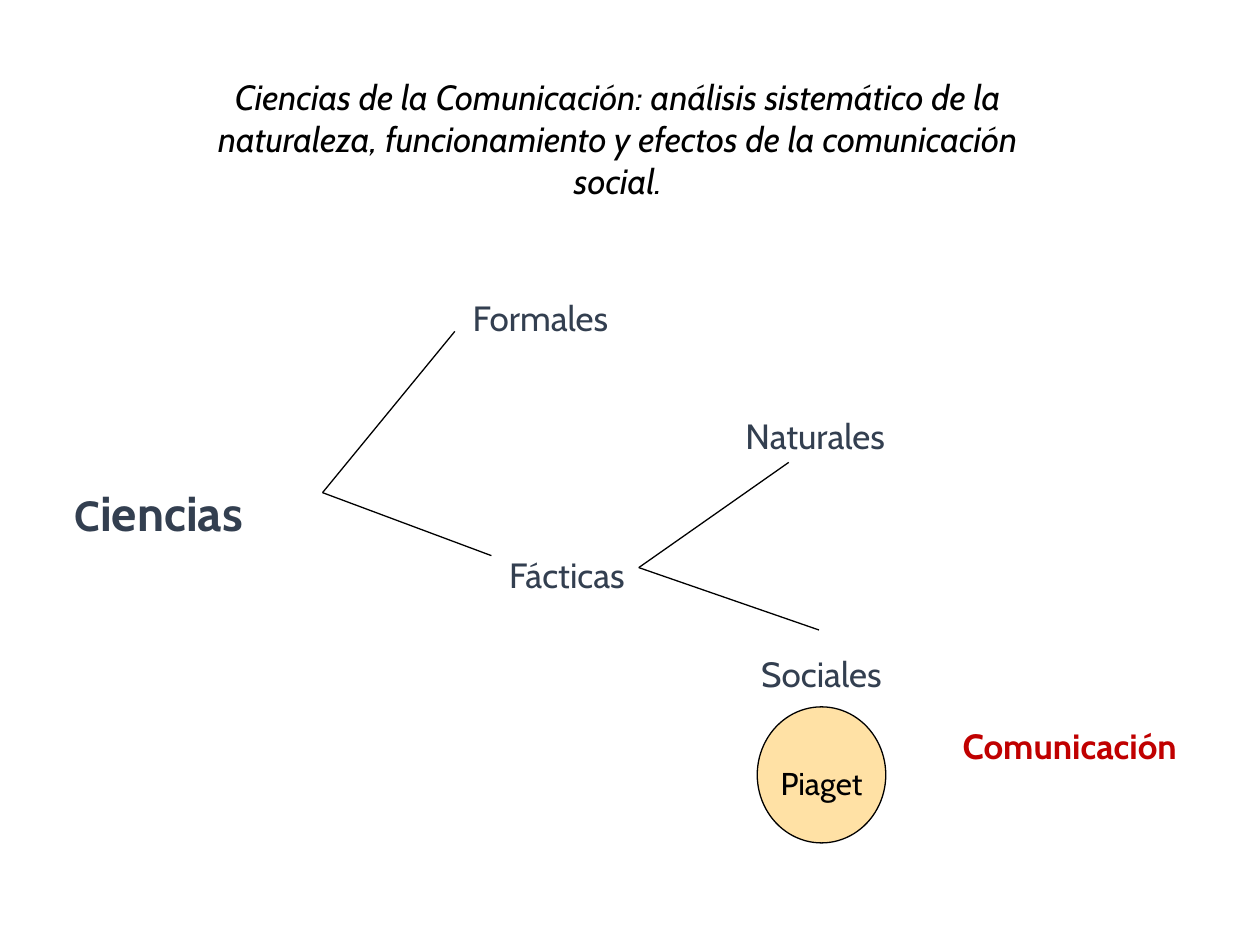
from pptx import Presentation
from pptx.dml.color import RGBColor
from pptx.enum import shapes, text
from pptx.oxml.ns import qn
from pptx.util import Pt
from lxml import etree

FONT = "Cabin"
SLATE, BLACK, RED, AMBER = "333F50", "000000", "C00000", "FFCC66"

TITLE = ("Ciencias de la Comunicación: análisis sistemático de la naturaleza, "
         "funcionamiento y efectos de la comunicación social.")
TITLE_BOX = (102.24, 39.6, 501.84, 79.92)

# Pieces of (text, size), left, top, colour, bold
LABELS = [
    ([("C", 24), ("iencias", 28)], -51.12, 267.12, SLATE, True),
    ([("Formales", 20)], 167.04, 162, SLATE, False),
    ([("Fácticas", 20)], 182.16, 308.88, SLATE, False),
    ([("Sociales", 20)], 327.6, 365.76, SLATE, False),
    ([("Naturales", 20)], 324, 229.68, SLATE, False),
    ([("Comunicación", 20)], 469.44, 406.8, RED, True),
]
LABEL_WIDTH = 283.68

# Fork point and the ends of its branches
FORKS = [
    ((184.32, 281.52), [(259.92, 189.36), (280.8, 317.52)]),
    ((365.04, 324.36), [(468, 360), (450.72, 264.24)]),
]

CIRCLE = (432.72, 403.92, 73.44, 77.76)
CIRCLE_LABEL = (393.12, 406.8, 152.64, 54.72)


def color(value):
    return RGBColor.from_string(value)


def points(values):
    return [Pt(value) for value in values]


def style(span, size, hue, bold=False, italic=False):
    font = span.font
    font.name, font.size, font.bold, font.italic = FONT, Pt(size), bold, italic
    font.color.rgb = color(hue)


def add_label(page, pieces, area, hue, bold=False, anchor=text.MSO_ANCHOR.TOP):
    frame = page.shapes.add_textbox(*points(area)).text_frame
    frame.word_wrap = True
    frame.vertical_anchor = anchor
    para = frame.paragraphs[0]
    para.alignment = text.PP_ALIGN.CENTER
    para.line_spacing = 1.15
    for words, size in pieces:
        span = para.add_run()
        span.text = words
        style(span, size, hue, bold)


def add_branch(page, start, end):
    line = page.shapes.add_connector(
        shapes.MSO_CONNECTOR.STRAIGHT, *points(start + end))
    line.line.color.rgb = color(BLACK)
    line.line.width = Pt(0.75)
    etree.SubElement(line._element.spPr, qn("a:effectLst"))


def add_title(page):
    title = page.shapes.title
    title.left, title.top, title.width, title.height = points(TITLE_BOX)
    frame = title.text_frame
    frame.text = TITLE
    frame.word_wrap = True
    frame.auto_size = text.MSO_AUTO_SIZE.NONE
    frame.vertical_anchor = text.MSO_ANCHOR.TOP
    para = frame.paragraphs[0]
    para.alignment = text.PP_ALIGN.CENTER
    style(para.runs[0], 20, BLACK, italic=True)


def add_circle(page):
    circle = page.shapes.add_shape(shapes.MSO_SHAPE.OVAL, *points(CIRCLE))
    circle.shadow.inherit = False
    circle.fill.solid()
    circle.fill.fore_color.rgb = color(AMBER)
    tint = circle._element.spPr.find(qn("a:solidFill"))[0]
    etree.SubElement(tint, qn("a:alpha"), val="59000")
    circle.line.color.rgb = color(BLACK)
    circle.line.width = Pt(0.75)


def main():
    deck = Presentation()
    deck.slide_width, deck.slide_height = Pt(720), Pt(540)
    page = deck.slides.add_slide(deck.slide_layouts[5])
    add_title(page)
    for fork, ends in FORKS:
        for end in ends:
            add_branch(page, fork, end)
    for pieces, left, top, hue, bold in LABELS:
        height = 42.48 if pieces[-1][1] == 28 else 35.28
        add_label(page, pieces, (left, top, LABEL_WIDTH, height), hue, bold)
    add_circle(page)
    add_label(page, [("Piaget", 18)], CIRCLE_LABEL, BLACK,
              anchor=text.MSO_ANCHOR.BOTTOM)
    deck.save("out.pptx")


if __name__ == "__main__":
    main()
